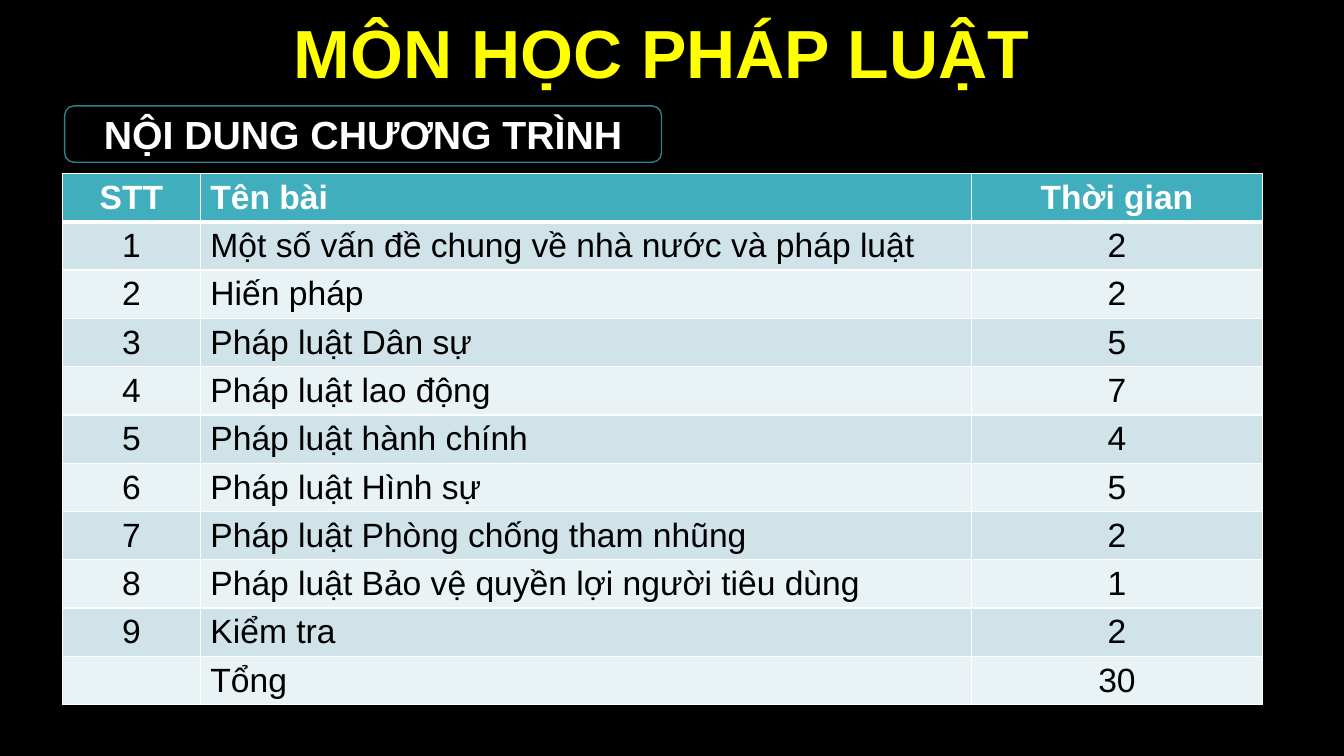
from dataclasses import dataclass

from lxml import etree
from pptx import Presentation
from pptx.dml.color import RGBColor
from pptx.enum.shapes import MSO_SHAPE
from pptx.enum.text import MSO_ANCHOR, PP_ALIGN
from pptx.oxml.ns import qn
from pptx.util import Cm, Pt

CENTER = PP_ALIGN.CENTER
LEFT = PP_ALIGN.LEFT
MIDDLE = MSO_ANCHOR.MIDDLE
ROUNDED = MSO_SHAPE.ROUNDED_RECTANGLE


@dataclass(frozen=True)
class Theme:
    font: str = "Arial"
    background: str = "000000"
    title: str = "FFFF00"
    light: str = "FFFFFF"
    dark: str = "000000"
    outline: str = "30818C"
    header: str = "41AEBD"
    bands: tuple = ("CFE3E8", "E9F2F4")
    title_size: float = 48.6
    heading_size: float = 28
    table_size: float = 24


HEADINGS = ("STT", "Tên bài", "Thời gian")
LESSONS = (
    ("Một số vấn đề chung về nhà nước và pháp luật", 2),
    ("Hiến pháp", 2),
    ("Pháp luật Dân sự", 5),
    ("Pháp luật lao động", 7),
    ("Pháp luật hành chính", 4),
    ("Pháp luật Hình sự", 5),
    ("Pháp luật Phòng chống tham nhũng", 2),
    ("Pháp luật Bảo vệ quyền lợi người tiêu dùng", 1),
    ("Kiểm tra", 2),
)


class SlideBuilder:
    def __init__(self, slide, theme):
        self.slide = slide
        self.theme = theme
        fill = slide.background.fill
        fill.solid()
        fill.fore_color.rgb = RGBColor.from_string(theme.background)

    def set_text(self, text_frame, text, size, color, bold=True, align=CENTER):
        text_frame.word_wrap = True
        paragraph = text_frame.paragraphs[0]
        paragraph.text = text
        paragraph.alignment = align
        paragraph.font.name = self.theme.font
        paragraph.font.size = Pt(size)
        paragraph.font.bold = bold
        paragraph.font.color.rgb = RGBColor.from_string(color)
        return paragraph

    def title(self, text, left, top, width, height):
        box = self.slide.shapes.add_textbox(Cm(left), Cm(top), Cm(width), Cm(height))
        box.text_frame.vertical_anchor = MIDDLE
        paragraph = self.set_text(box.text_frame, text, self.theme.title_size, self.theme.title)
        paragraph.line_spacing = 0.9

    def heading(self, text, left, top, width, height):
        shape = self.slide.shapes.add_shape(ROUNDED, Cm(left), Cm(top), Cm(width), Cm(height))
        shape.shadow.inherit = False
        shape.fill.background()
        shape.line.color.rgb = RGBColor.from_string(self.theme.outline)
        shape.line.width = Pt(1)
        shape.text_frame.vertical_anchor = MIDDLE
        self.set_text(shape.text_frame, text, self.theme.heading_size, self.theme.light)

    def borders(self, cell, top, bottom):
        properties = cell._tc.get_or_add_tcPr()
        for side, points in (("L", 1), ("R", 1), ("T", top), ("B", bottom)):
            line = etree.SubElement(properties, qn(f"a:ln{side}"), w=str(Pt(points)))
            fill = etree.SubElement(line, qn("a:solidFill"))
            etree.SubElement(fill, qn("a:srgbClr"), val=self.theme.light)

    def table(self, rows, left, top, column_widths, row_height):
        theme = self.theme
        frame = self.slide.shapes.add_table(
            len(rows), len(column_widths), Cm(left), Cm(top),
            Cm(sum(column_widths)), Cm(row_height * len(rows)))
        table = frame.table
        table.horz_banding = False
        for column, width in zip(table.columns, column_widths):
            column.width = Cm(width)
        for row_index, values in enumerate(rows):
            table.rows[row_index].height = Cm(row_height)
            is_header = row_index == 0
            fill_color = theme.header if is_header else theme.bands[(row_index - 1) % 2]
            text_color = theme.light if is_header else theme.dark
            for column_index, value in enumerate(values):
                cell = table.cell(row_index, column_index)
                self.borders(cell, 3 if row_index == 1 else 1, 3 if is_header else 1)
                cell.fill.solid()
                cell.fill.fore_color.rgb = RGBColor.from_string(fill_color)
                cell.margin_top = cell.margin_bottom = Cm(0.1)
                cell.vertical_anchor = MIDDLE
                align = LEFT if column_index == 1 else CENTER
                self.set_text(cell.text_frame, str(value), theme.table_size,
                              text_color, is_header, align)


def main():
    presentation = Presentation()
    presentation.slide_width = Cm(33.87)
    presentation.slide_height = Cm(19.05)
    slide = presentation.slides.add_slide(presentation.slide_layouts[6])
    builder = SlideBuilder(slide, Theme())
    builder.title("MÔN HỌC PHÁP LUẬT", 2.18, 0.71, 28.98, 1.45)
    builder.heading("NỘI DUNG CHƯƠNG TRÌNH", 1.63, 2.67, 15.04, 1.42)
    lessons = [(number, name, hours) for number, (name, hours) in enumerate(LESSONS, 1)]
    total = ("", "Tổng", sum(hours for _, hours in LESSONS))
    builder.table([HEADINGS, *lessons, total], 1.57, 4.37, (3.48, 19.43, 7.34), 1.2)
    presentation.save("out.pptx")


if __name__ == "__main__":
    main()
